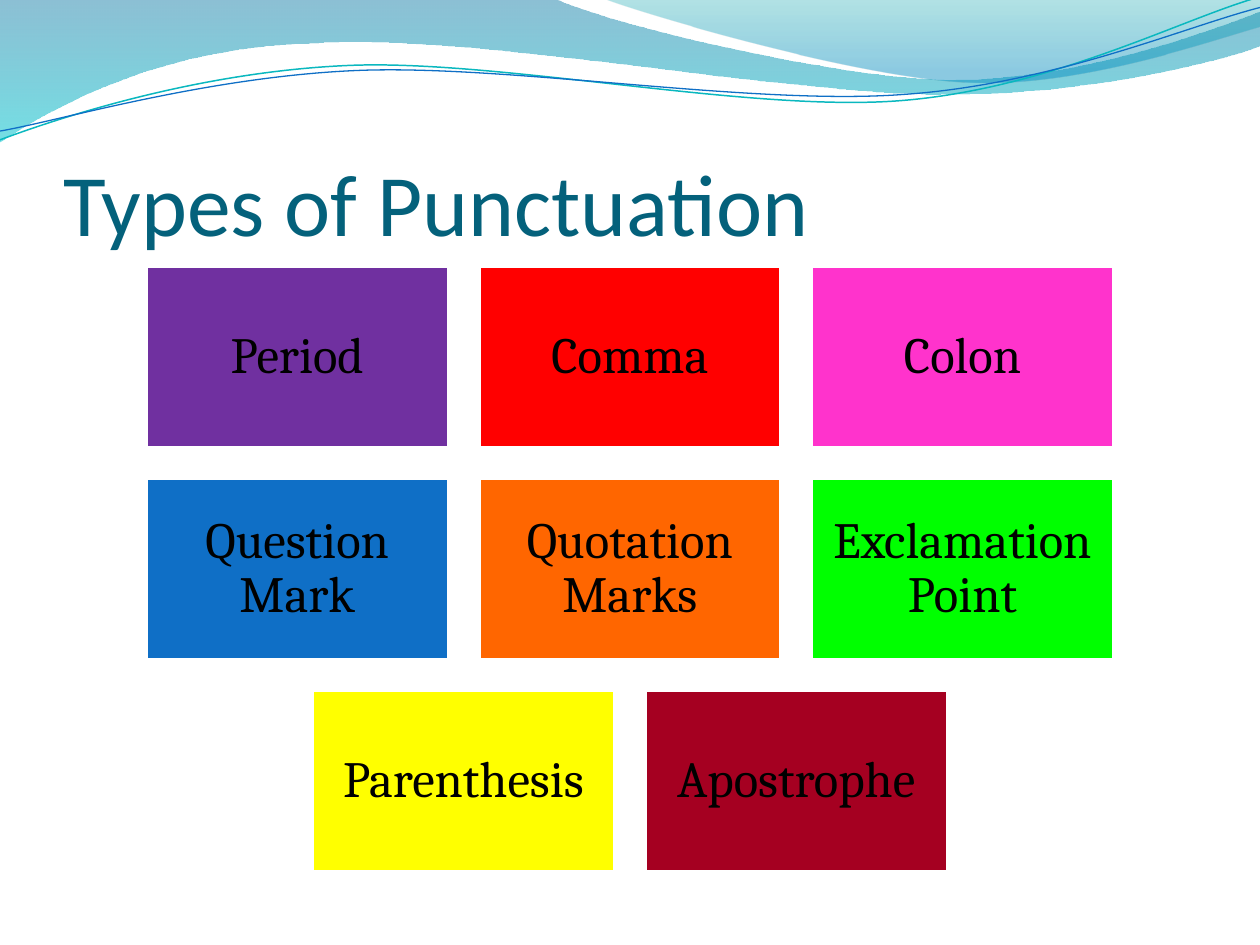
from math import cos, radians, sin

from lxml.etree import SubElement
from pptx import Presentation
from pptx.dml.color import RGBColor
from pptx.enum.shapes import MSO_SHAPE
from pptx.enum.text import MSO_ANCHOR, PP_ALIGN
from pptx.oxml.ns import qn
from pptx.util import Pt

# Content
TITLE = "Types of Punctuation"
ROWS = [
    [("Period", "7030A0"), ("Comma", "FF0000"), ("Colon", "FF33CC")],
    [("Question Mark", "0F6FC6"), ("Quotation Marks", "FF6600"),
     ("Exclamation Point", "00FF00")],
    [("Parenthesis", "FFFF00"), ("Apostrophe", "A50021")],
]

# Waves in points: a start, then line ends (one point) or curves (three points)
BANDS = [
    {"start": (0, 0),
     "steps": [[(317, -0.7)],
               [(342.7, 12.2), (478.1, 45.4), (545.8, 45.4)],
               [(614.2, 45.4), (689.8, 18.7), (720, 6.5)],
               [(720.7, 25.9)],
               [(707.8, 31.7), (626.4, 54.7), (537.1, 54)],
               [(447.8, 54), (275, 20.2), (185, 24.5)],
               [(92.9, 25.9), (33.1, 59.8), (-0.7, 81.4)]],
     "stops": [(0, "0074A1", 45), (1, "00C6CF", 55)]},
    {"start": (344.9, -0.7),
     "steps": [[(366.5, 7.9), (491, 44.6), (553.7, 46.8)],
               [(616.3, 49.7), (691.9, 23), (720, 15.1)],
               [(720, 0)],
               [(344.9, -0.7)]],
     "stops": [(0, "00A1A9", 30), (0.8, "008BBF", 45)]},
]
STRANDS = [
    {"start": (0, 79.9),
     "steps": [[(34.6, 67), (113.8, 41), (199.4, 37.4)],
               [(284.4, 33.8), (427, 64.1), (513.4, 57.6)],
               [(599.8, 51.1), (675.4, 10.8), (718.6, -1.4)]],
     "center": (359.3, 41.4), "color": "0AB8BF", "width": 0.85},
    {"start": (0, 74.9),
     "steps": [[(33.8, 69.1), (118.1, 43.9), (203.8, 40.3)],
               [(290.2, 36.7), (429.8, 60.5), (516.2, 54)],
               [(601.9, 48.2), (677.5, 15.1), (720, 4.3)]],
     "center": (359.6, 42.5), "color": "0F6FC6", "width": 0.75},
]
STRAND_TILT = 2.7

# Layout in points
PAGE_WIDTH, PAGE_HEIGHT = 720, 540
BOX_WIDTH, BOX_HEIGHT, GAP = 172.8, 103.68, 17.28
GRID_TOP = 152.4


def rgb(color):
    return RGBColor.from_string(color)


def turn(point, center, degrees):
    """The point turned clockwise about the center."""
    x, y = point[0] - center[0], point[1] - center[1]
    angle = radians(degrees)
    return (center[0] + x * cos(angle) - y * sin(angle),
            center[1] + x * sin(angle) + y * cos(angle))


def add_wave(page, start, steps, closed):
    builder = page.shapes.build_freeform(Pt(start[0]), Pt(start[1]))
    builder.add_line_segments([(Pt(x), Pt(y)) for step in steps for x, y in step],
                              close=closed)
    shape = builder.convert_to_shape()
    shape.shadow.inherit = False
    # Merge each group of three points into one cubic curve
    lines = iter(list(shape.element.iter(qn("a:lnTo"))))
    for step in steps:
        first, *others = [next(lines) for _ in step]
        if others:
            first.tag = qn("a:cubicBezTo")
        for other in others:
            first.append(other[0])
            other.getparent().remove(other)
    return shape


def add_band(page, band):
    shape = add_wave(page, band["start"], band["steps"], closed=True)
    shape.line.fill.background()
    shape.fill.gradient()
    shape.fill.gradient_angle = 270
    for stop, (position, color, _) in zip(shape.fill.gradient_stops, band["stops"]):
        stop.position = position
        stop.color.rgb = rgb(color)
    # Opacity of each stop
    colors = list(shape.element.spPr.iter(qn("a:srgbClr")))
    for color, (_, _, opacity) in zip(colors, band["stops"]):
        SubElement(color, qn("a:alpha")).set("val", str(opacity * 1000))


def add_strand(page, strand):
    # Level the points, then tilt the whole shape
    center = strand["center"]
    start = turn(strand["start"], center, STRAND_TILT)
    steps = [[turn(point, center, STRAND_TILT) for point in step]
             for step in strand["steps"]]
    shape = add_wave(page, start, steps, closed=False)
    shape.rotation = 360 - STRAND_TILT
    shape.fill.background()
    shape.line.color.rgb = rgb(strand["color"])
    shape.line.width = Pt(strand["width"])


def set_text(shape, text, font, size, color, align, anchor, margins):
    frame = shape.text_frame
    frame.word_wrap = True
    frame.vertical_anchor = anchor
    (frame.margin_left, frame.margin_top,
     frame.margin_right, frame.margin_bottom) = [Pt(margin) for margin in margins]
    para = frame.paragraphs[0]
    para.alignment = align
    span = para.add_run()
    span.text = text
    span.font.name = font
    span.font.size = Pt(size)
    span.font.color.rgb = rgb(color)
    return para


def add_box(page, text, color, left, top):
    box = page.shapes.add_shape(MSO_SHAPE.RECTANGLE, Pt(left), Pt(top),
                                Pt(BOX_WIDTH), Pt(BOX_HEIGHT))
    box.shadow.inherit = False
    box.fill.solid()
    box.fill.fore_color.rgb = rgb(color)
    box.line.color.rgb = rgb("FFFFFF")
    box.line.width = Pt(2)
    para = set_text(box, text, "Cambria", 29, "000000", PP_ALIGN.CENTER,
                    MSO_ANCHOR.MIDDLE, [8.7] * 4)
    para.line_spacing = 0.9


def main():
    deck = Presentation()
    deck.slide_width, deck.slide_height = Pt(PAGE_WIDTH), Pt(PAGE_HEIGHT)
    page = deck.slides.add_slide(deck.slide_layouts[5])

    # Waves at the top
    for band in BANDS:
        add_band(page, band)
    for strand in STRANDS:
        add_strand(page, strand)

    # Title, in front of the waves
    title = page.shapes.title
    title.left, title.top, title.width, title.height = Pt(36), Pt(55.4), Pt(648), Pt(90)
    set_text(title, TITLE, "Calibri", 50, "04617B", PP_ALIGN.LEFT,
             MSO_ANCHOR.BOTTOM, [0, 3.6, 0, 0])
    page.shapes.element.append(title.element)

    # Centred rows of boxes
    for row, items in enumerate(ROWS):
        row_width = len(items) * (BOX_WIDTH + GAP) - GAP
        row_left = (PAGE_WIDTH - row_width) / 2
        top = GRID_TOP + row * (BOX_HEIGHT + GAP)
        for column, (text, color) in enumerate(items):
            add_box(page, text, color, row_left + column * (BOX_WIDTH + GAP), top)

    deck.save("out.pptx")


if __name__ == "__main__":
    main()
